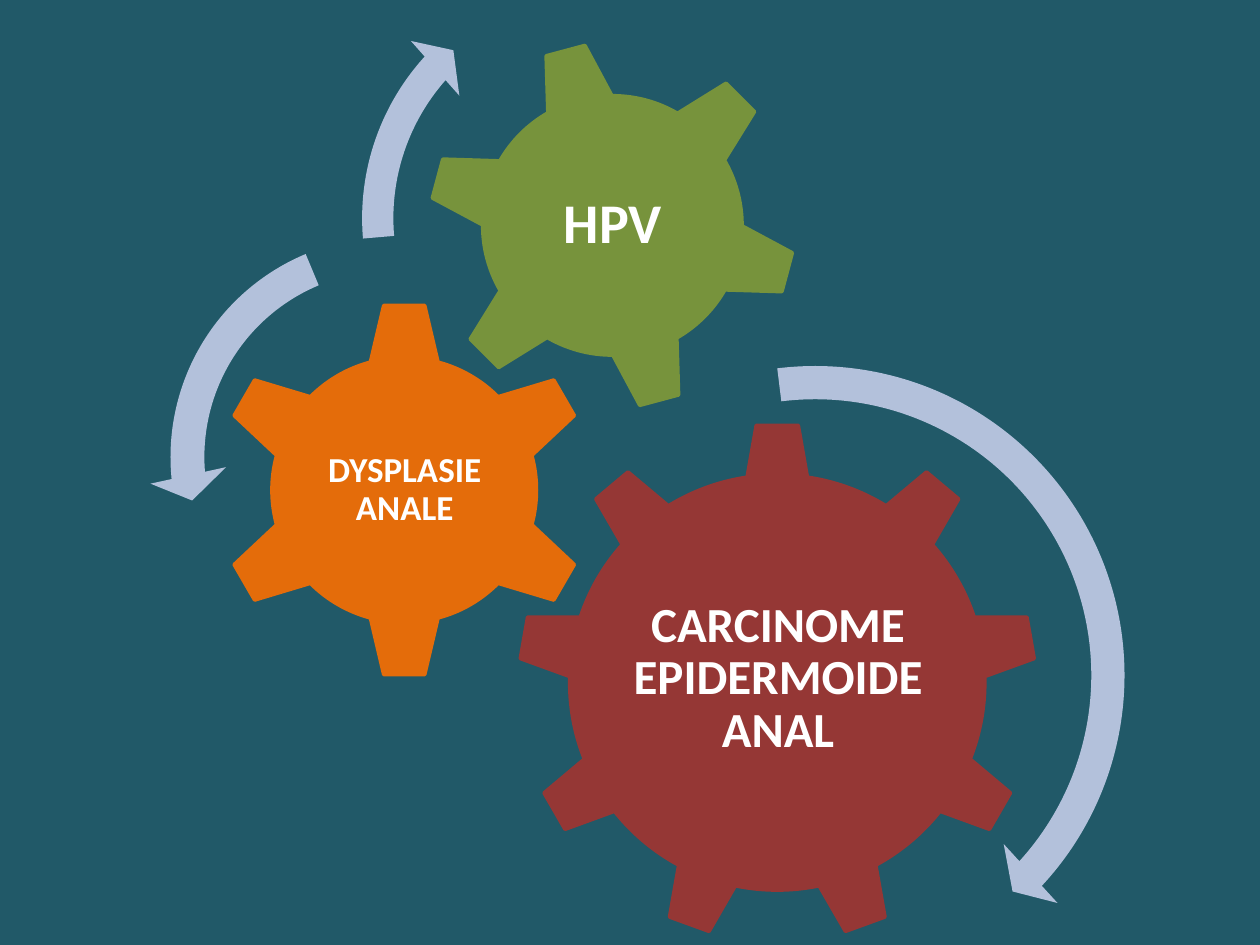
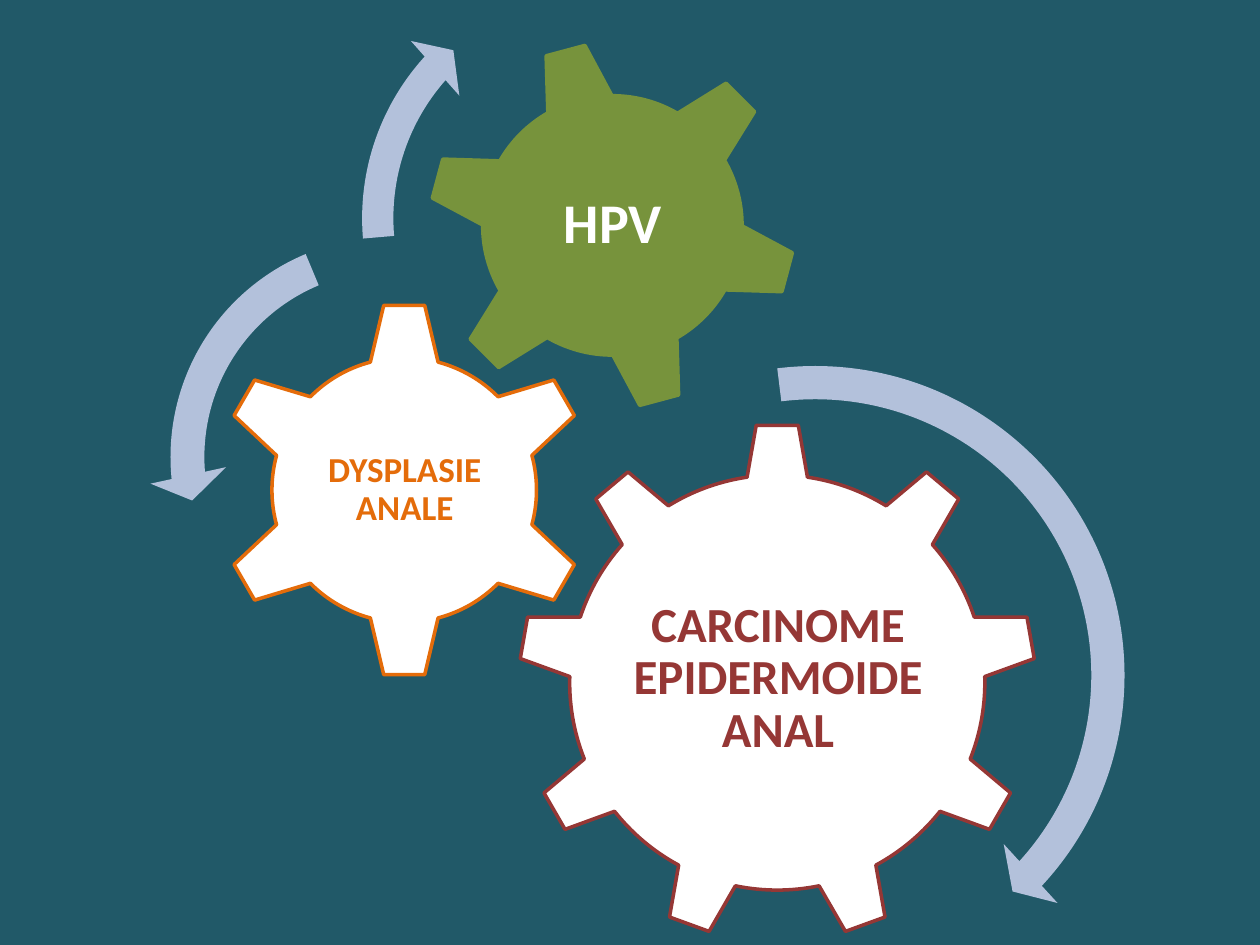
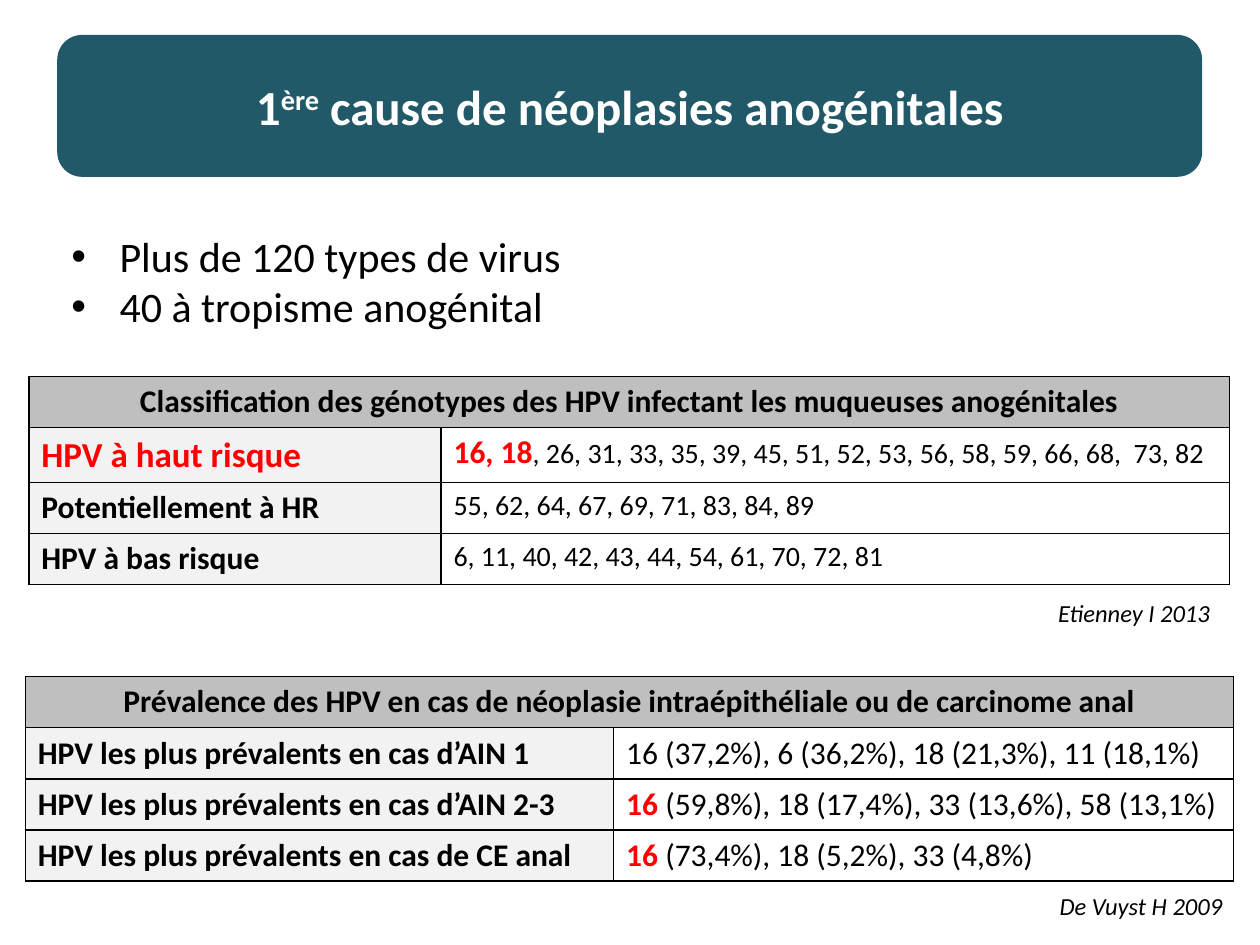
from lxml import etree
from pptx import Presentation
from pptx import util as u
from pptx.dml import color as dml
from pptx.enum import shapes, text
from pptx.oxml import ns

# Shared look
FONT = "Calibri"
TEAL, WHITE, BLACK = "215968", "FFFFFF", "000000"
MAROON, ORANGE, GREEN, ARROW = "953735", "E46C0A", "77933C", "B3C1DB"
RED, HEADER, LABEL = "FF0000", "BFBFBF", "F2F2F2"
KIND = shapes.MSO_SHAPE
CENTER, MIDDLE = text.PP_ALIGN.CENTER, text.MSO_ANCHOR.MIDDLE

# Gears: preset, left, top, size, rotation
BIG_GEAR = (KIND.GEAR_9, 10.44, 8.53, 10.46, 0)
LEFT_GEAR = (KIND.GEAR_6, 4.34, 6.07, 7.62, 0)
TOP_GEAR = (KIND.GEAR_6, 8.61, 0.81, 7.47, 345)

# Turning arrows: preset, left, top, size, adjustments
ARROWS = [
    (KIND.CIRCULAR_ARROW, 9.73, 6.91, 13.41, (0.05, 2.99, 25.57, 157.77, 0.06)),
    (KIND.LEFT_CIRCULAR_ARROW, 3.0, 4.34, 9.75, (0.07, 4.3, 104.89, 148.38, 0.08)),
    (KIND.CIRCULAR_ARROW, 6.88, -0.86, 10.52, (0.06, 3.94, 133.14, 105.08, 0.07)),
]

# Table contents: each cell is a list of (words, format) spans
STRONG = {"size": 18, "bold": True}
ALERT = {**STRONG, "color": RED}
PLAIN, SMALL = {"size": 18}, {"size": 16}
GENOTYPES = [
    ([("HPV à haut risque", {**ALERT, "size": 20})],
     [("16, 18", ALERT),
      (", 26, 31, 33, 35, 39, 45, 51, 52, 53, 56, 58, 59, 66, 68,  73, 82", SMALL)]),
    ([("Potentiellement à HR", STRONG)],
     [("55, 62, 64, 67, 69, 71, 83, 84, 89", SMALL)]),
    ([("HPV à bas risque", STRONG)],
     [("6, 11, 40, 42, 43, 44, 54, 61, 70, 72, 81", SMALL)]),
]
PREVALENCE = [
    ([("HPV les plus prévalents en cas d’AIN 1", STRONG)],
     [("16 (37,2%), 6 (36,2%), 18 (21,3%), 11 (18,1%)", PLAIN)]),
    ([("HPV les plus prévalents en cas d’AIN 2-3", STRONG)],
     [("16", ALERT), (" (59,8%), 18 (17,4%), 33 (13,6%), 58 (13,1%)", PLAIN)]),
    ([("HPV les plus prévalents en cas de CE anal", STRONG)],
     [("16", ALERT), (" (73,4%), 18 (5,2%), 33 (4,8%)", PLAIN)]),
]


def rgb(code):
    return dml.RGBColor.from_string(code)


def cm(*values):
    return [u.Cm(value) for value in values]


def paint(item, code):
    item.fill.solid()
    item.fill.fore_color.rgb = rgb(code)


def write(para, spans, **layout):
    """Fill a paragraph with (words, format) spans."""
    for name, value in layout.items():
        setattr(para, name, value)
    for words, look in spans:
        span = para.add_run()
        span.text = words
        look = {"name": FONT, "color": BLACK, "bold": False, **look}
        span.font.color.rgb = rgb(look.pop("color"))
        look["size"] = u.Pt(look["size"])
        baseline = look.pop("baseline", None)
        if baseline:
            span._r.get_or_add_rPr().set("baseline", baseline)
        for name, value in look.items():
            setattr(span.font, name, value)


def add_page(deck, background):
    page = deck.slides.add_slide(deck.slide_layouts[6])
    paint(page.background, background)
    return page


def add_shape(page, kind, place, fill, line=None):
    shape = page.shapes.add_shape(kind, *cm(*place))
    shape.shadow.inherit = False
    paint(shape, fill)
    if line:
        shape.line.color.rgb = rgb(line)
        shape.line.width = u.Pt(2)
    else:
        shape.line.fill.background()
    return shape


def add_text(page, place, wrap=True, margin=None):
    frame = page.shapes.add_textbox(*cm(*place)).text_frame
    frame.word_wrap = wrap
    if margin is not None:
        for side in ("left", "right", "top", "bottom"):
            setattr(frame, "margin_" + side, u.Cm(margin))
    return frame


def add_gear(page, gear, color, label, place, size, hollow=False):
    kind, left, top, side, turn = gear
    shape = add_shape(page, kind, (left, top, side, side), WHITE if hollow else color, color)
    shape.rotation = turn
    frame = add_text(page, place, margin=0.1)
    frame.vertical_anchor = MIDDLE
    look = {"size": size, "bold": True, "color": color if hollow else WHITE}
    write(frame.paragraphs[0], [(label, look)], alignment=CENTER, line_spacing=0.9)


def add_arrow(page, kind, left, top, side, adjustments):
    arrow = add_shape(page, kind, (left, top, side, side), ARROW)
    for index, value in enumerate(adjustments):
        arrow.adjustments[index] = value


def add_gear_page(deck, hollow):
    page = add_page(deck, TEAL)
    add_gear(page, BIG_GEAR, MAROON, "CARCINOME EPIDERMOIDE ANAL",
             (12.55, 11, 6.27, 5.38), 28, hollow)
    add_gear(page, LEFT_GEAR, ORANGE, "DYSPLASIE ANALE", (6.27, 8, 3.78, 3.76), 20, hollow)
    add_gear(page, TOP_GEAR, GREEN, "HPV", (10.26, 2.44, 4.19, 4.19), 32)
    for arrow in ARROWS:
        add_arrow(page, *arrow)


def add_title(page, spans):
    band = add_shape(page, KIND.ROUNDED_RECTANGLE, (1.19, 0.74, 23.01, 2.79), TEAL, TEAL)
    band.text_frame.vertical_anchor = MIDDLE
    look = {"size": 28, "bold": True, "color": WHITE}
    write(band.text_frame.paragraphs[0],
          [(words, {**look, **extra}) for words, extra in spans], alignment=CENTER)


def add_bullets(page, place, lines):
    frame = add_text(page, place)
    for index, line in enumerate(lines):
        para = frame.add_paragraph() if index else frame.paragraphs[0]
        write(para, [(line, {"size": 24})])
        props = para._p.get_or_add_pPr()
        props.set("marL", str(u.Cm(0.97)))
        props.set("indent", str(u.Cm(-0.97)))
        etree.SubElement(props, ns.qn("a:buFont"), typeface="Arial")
        etree.SubElement(props, ns.qn("a:buChar"), char="•")


def dress_cell(cell, fill):
    """Black 1 pt borders first, then the fill, as the schema orders them."""
    props = cell._tc.get_or_add_tcPr()
    for side in ("a:lnL", "a:lnR", "a:lnT", "a:lnB"):
        border = etree.SubElement(props, ns.qn(side), w=str(u.Pt(1)))
        solid = etree.SubElement(border, ns.qn("a:solidFill"))
        etree.SubElement(solid, ns.qn("a:srgbClr"), val=BLACK)
    paint(cell, fill)


def add_table(page, left, top, widths, heading, rows):
    count, height = len(rows) + 1, 1.03
    table = page.shapes.add_table(
        count, len(widths), *cm(left, top, sum(widths), count * height)).table
    table.first_row = table.horz_banding = False
    for column, width in zip(table.columns, widths):
        column.width = u.Cm(width)
    for row in table.rows:
        row.height = u.Cm(height)
    # Heading across both columns
    for cell in table.rows[0].cells:
        dress_cell(cell, HEADER)
    title = table.cell(0, 0)
    title.merge(table.cell(0, 1))
    title.vertical_anchor = MIDDLE
    write(title.text_frame.paragraphs[0], [(heading, STRONG)], alignment=CENTER)
    # Label and values
    for number, row in enumerate(rows, 1):
        for column, (spans, fill) in enumerate(zip(row, (LABEL, WHITE))):
            cell = table.cell(number, column)
            dress_cell(cell, fill)
            write(cell.text_frame.paragraphs[0], spans)


def add_citation(page, place, words):
    frame = add_text(page, place, wrap=False)
    write(frame.paragraphs[0], [(words, {"size": 14, "italic": True})])


def add_types_page(deck):
    page = add_page(deck, WHITE)
    add_title(page, [("1", {}), ("ère", {"baseline": "30000"}),
                     (" cause de néoplasies anogénitales", {})])
    add_bullets(page, (1.19, 4.52, 23.01, 2.31),
                ["Plus de 120 types de virus", "40 à tropisme anogénital"])
    add_table(page, 0.58, 7.59, (8.31, 15.9),
              "Classification des génotypes des HPV infectant les muqueuses anogénitales",
              GENOTYPES)
    add_citation(page, (21.08, 11.94, 3.61, 0.86), "Etienney I 2013")
    add_table(page, 0.51, 13.64, (11.86, 12.5),
              "Prévalence des HPV en cas de néoplasie intraépithéliale ou de carcinome anal",
              PREVALENCE)
    add_citation(page, (21.11, 17.83, 3.84, 0.86), "De Vuyst H 2009")


def main():
    deck = Presentation()
    deck.slide_width, deck.slide_height = cm(25.4, 19.05)
    for hollow in (False, True):
        add_gear_page(deck, hollow)
    add_types_page(deck)
    deck.save("out.pptx")


if __name__ == "__main__":
    main()
